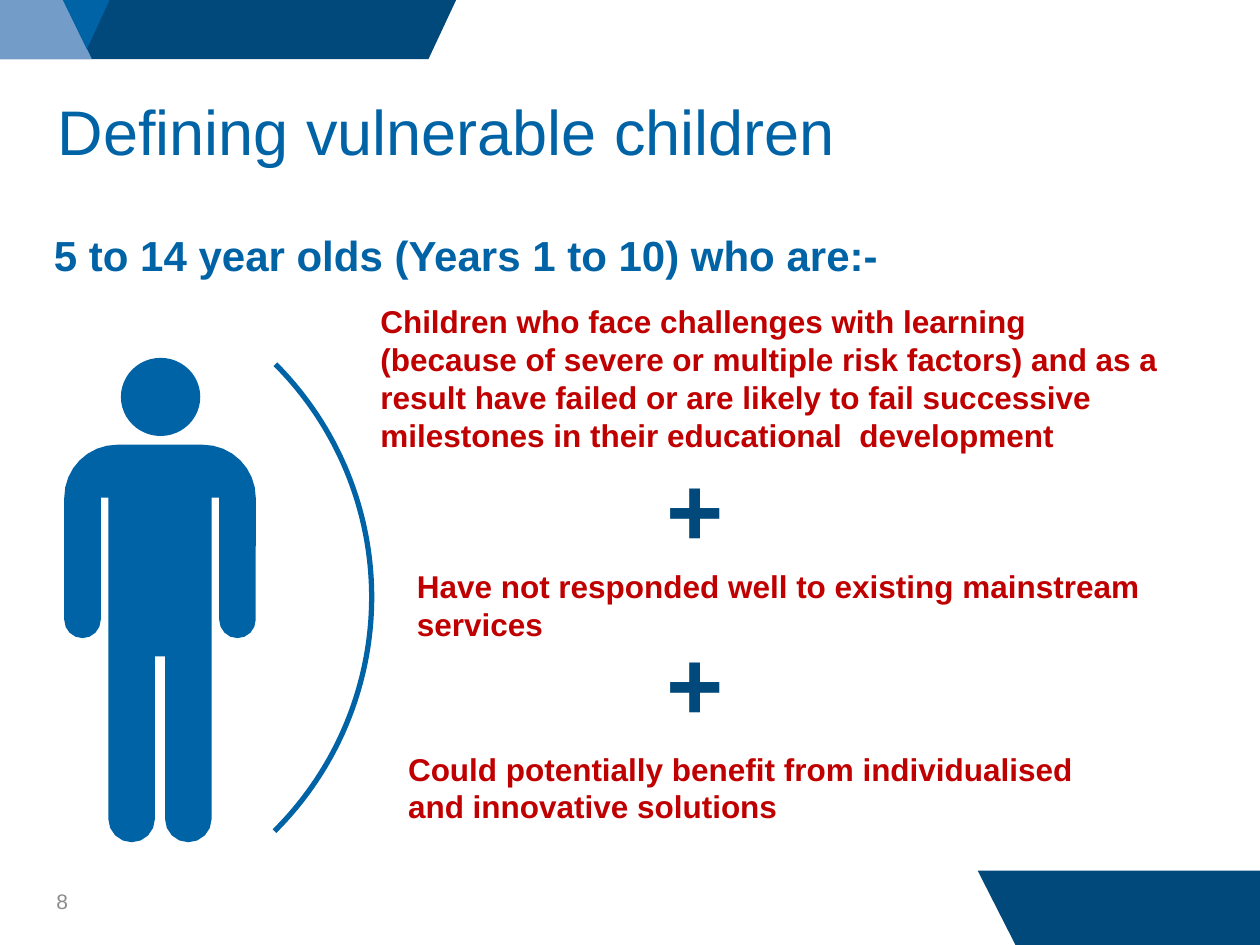
import math
import pptx
import pptx.util
import pptx.dml.color
import pptx.enum.shapes
import pptx.enum.text

Inches, Pt = pptx.util.Inches, pptx.util.Pt
RGB = pptx.dml.color.RGBColor.from_string
SHAPE = pptx.enum.shapes.MSO_SHAPE
ALIGN = pptx.enum.text.PP_ALIGN
ANCHOR = pptx.enum.text.MSO_ANCHOR

THEME = {
    "font": "Arial",
    "navy": "00497A", "blue": "0063A6", "pale": "749CC9",
    "red": "C00000", "grey": "8C8C8C",
    "title": 36, "lead": 24, "body": 18, "plus": 56, "number": 12,
}

# Content: text, box (left, top, width, height), style
TEXTS = [
    ("Defining vulnerable children", (0.36, 0.52, 9.29, 1.03), "title"),
    ("8", (0.35, 6.95, 2.33, 0.4), "number"),
    ("5 to 14 year olds (Years 1 to 10) who are:-", (0.33, 1.77, 7.14, 0.5), "lead"),
    ("Children who face challenges with learning (because of severe or multiple "
     "risk factors) and as a result have failed or are likely to fail successive "
     "milestones in their educational  development", (2.92, 2.35, 6.42, 1.31), "body"),
    ("Have not responded well to existing mainstream services",
     (3.21, 4.45, 6.79, 0.71), "body"),
    ("Could potentially benefit from individualised and innovative solutions",
     (3.14, 5.9, 5.98, 0.71), "body"),
    ("+", (5.12, 3.51, 0.8, 1.04), "plus"),
    ("+", (5.12, 4.89, 0.8, 1.04), "plus"),
]

# Style: colour, bold, alignment, anchor
STYLES = {
    "title": ("blue", False, ALIGN.LEFT, ANCHOR.MIDDLE),
    "number": ("grey", False, ALIGN.LEFT, ANCHOR.MIDDLE),
    "lead": ("blue", True, ALIGN.LEFT, ANCHOR.TOP),
    "body": ("red", True, ALIGN.LEFT, ANCHOR.TOP),
    "plus": ("navy", True, ALIGN.CENTER, ANCHOR.TOP),
}

# Corner bands: colour, corner points
BANDS = [
    ("navy", [(7.76, 6.91), (10, 6.91), (10, 7.5), (8.06, 7.5)]),
    ("navy", [(0, 0), (3.62, 0), (3.4, 0.47), (0, 0.47)]),
    ("pale", [(0, 0), (0.5, 0), (0.73, 0.47), (0, 0.47)]),
    ("blue", [(0.5, 0), (0.87, 0), (0.69, 0.39)]),
]


def paint(sp, colour):
    sp.shadow.inherit = False
    sp.fill.solid()
    sp.fill.fore_color.rgb = RGB(THEME[colour])
    sp.line.fill.background()


def add_outline(s, points, colour):
    first, *rest = [(Inches(x), Inches(y)) for x, y in points]
    builder = s.shapes.build_freeform(*first)
    builder.add_line_segments(rest, close=True)
    paint(builder.convert_to_shape(), colour)


def arc(cx, cy, radius, start, end, steps=8):
    angles = [math.radians(start + (end - start) * i / steps) for i in range(steps + 1)]
    return [(cx + radius * math.cos(a), cy + radius * math.sin(a)) for a in angles]


def add_person(s, axis=1.27):
    head = s.shapes.add_shape(SHAPE.OVAL, Inches(axis - 0.31), Inches(2.84),
                              Inches(0.63), Inches(0.62))
    paint(head, "blue")
    # Right half from shoulder to crotch, then its mirror image
    half = (arc(1.61, 3.95, 0.42, -90, 0)
            + arc(1.885, 4.92, 0.145, 0, 180)
            + [(1.74, 3.95), (1.68, 3.95)]
            + arc(1.495, 6.5, 0.185, 0, 180)
            + [(1.31, 5.21)])
    mirror = [(2 * axis - x, y) for x, y in reversed(half)]
    add_outline(s, half + mirror, "blue")


def add_bracket(s):
    sp = s.shapes.add_shape(SHAPE.ARC, *map(Inches, (-2.29, 2.12, 5.24, 5.24)))
    sp.rotation = 45.1
    sp.shadow.inherit = False
    sp.fill.background()
    sp.line.color.rgb = RGB(THEME["blue"])
    sp.line.width = Pt(3)


def add_text(s, text, box, style):
    colour, bold, align, anchor = STYLES[style]
    tf = s.shapes.add_textbox(*map(Inches, box)).text_frame
    tf.word_wrap = True
    tf.vertical_anchor = anchor
    p = tf.paragraphs[0]
    p.alignment = align
    r = p.add_run()
    r.text = text
    formats = {"name": THEME["font"], "size": Pt(THEME[style]), "bold": bold}
    for name, value in formats.items():
        setattr(r.font, name, value)
    r.font.color.rgb = RGB(THEME[colour])


def main():
    prs = pptx.Presentation()
    prs.slide_width, prs.slide_height = Inches(10), Inches(7.5)
    s = prs.slides.add_slide(prs.slide_layouts[6])
    for colour, points in BANDS:
        add_outline(s, points, colour)
    add_bracket(s)
    add_person(s)
    for text, box, style in TEXTS:
        add_text(s, text, box, style)
    prs.save("out.pptx")


if __name__ == "__main__":
    main()
